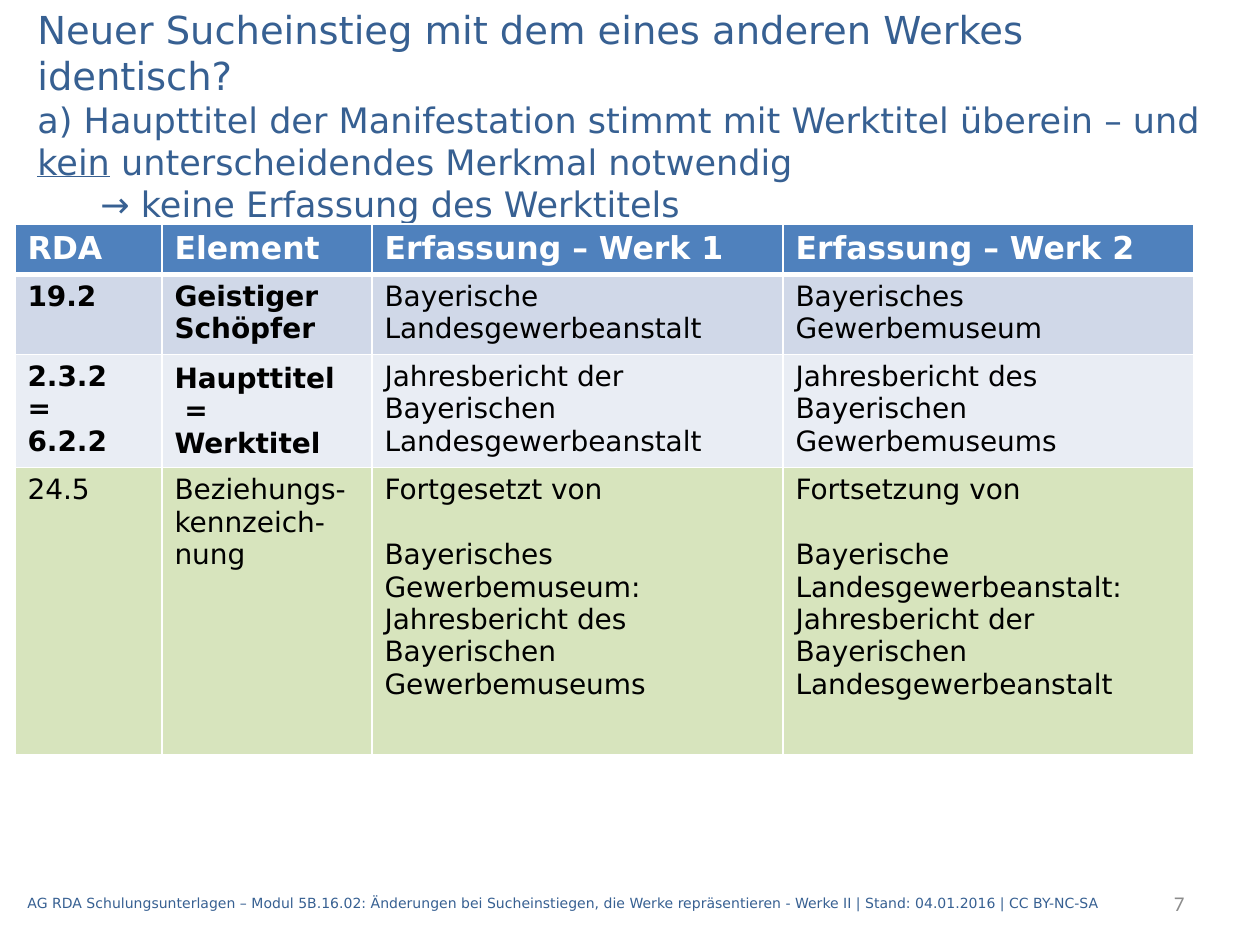
from lxml import etree
from pptx import Presentation
from pptx import util as u
from pptx.dml.color import RGBColor
from pptx.enum import text
from pptx.oxml.ns import qn

INK = {"blue": "376092", "gray": "8C8C8C", "black": "000000",
       "white": "FFFFFF", "head": "4F81BD", "mid": "D0D8E8",
       "pale": "E9EDF4", "green": "D7E4BD"}
MAIN = "DejaVu Sans"


def px(n):
    return u.Emu(round(n * 914400 / 126))


def write(par, words, size=16, ink="black", font=MAIN, bold=False, line=False):
    for i, part in enumerate(words.split("\n")):
        if i:
            par.add_line_break()
        if not part:
            continue
        run = par.add_run()
        run.text = part
        run.font.size = u.Pt(size)
        run.font.name = font
        run.font.bold = bold
        run.font.underline = line
        run.font.color.rgb = RGBColor.from_string(INK[ink])


class Page:
    def __init__(self, deck):
        self.slide = deck.slides.add_slide(deck.slide_layouts[6])

    def box(self, left, top, width, height, runs, align=text.PP_ALIGN.LEFT):
        shape = self.slide.shapes.add_textbox(*map(px, (left, top, width, height)))
        frame = shape.text_frame
        frame.word_wrap = True
        frame.vertical_anchor = text.MSO_ANCHOR.MIDDLE
        par = frame.paragraphs[0]
        par.alignment = align
        for words, form in runs:
            write(par, words, **form)

    def edge(self, cell, sides):
        props = cell._tc.get_or_add_tcPr()
        for at, (side, wide) in enumerate(sides.items()):
            line = etree.Element(qn(f"a:ln{side}"), w=str(u.Pt(wide)))
            fill = etree.SubElement(line, qn("a:solidFill"))
            etree.SubElement(fill, qn("a:srgbClr"), val=INK["white"])
            props.insert(at, line)

    def cell(self, cell, pars, fill, gap=0, **form):
        cell.fill.solid()
        cell.fill.fore_color.rgb = RGBColor.from_string(INK[fill])
        for i, words in enumerate(pars):
            frame = cell.text_frame
            par = frame.add_paragraph() if i else frame.paragraphs[0]
            if i and gap:
                par.space_before = u.Pt(gap)
            write(par, words, **form)

    def table(self, left, top, cols, rows, data, fills):
        grid = self.slide.shapes.add_table(
            len(rows), len(cols), *map(px, (left, top, sum(cols), sum(rows)))).table
        for col, wide in zip(grid.columns, cols):
            col.width = px(wide)
        for row, high in zip(grid.rows, rows):
            row.height = px(high)
        for r, line in enumerate(data):
            for c, pars in enumerate(line):
                cell = grid.cell(r, c)
                head = r == 0
                self.cell(cell, pars, fills[r],
                          gap=18.6 if r == 3 else 0,
                          size=18 if head else 16,
                          ink="white" if head else "black",
                          bold=head or (r < 3 and c < 2))
                self.edge(cell, {"L": 1, "R": 1, "T": 3 if r == 1 else 1,
                                 "B": 3 if head else 1})
        grid.cell(2, 1).vertical_anchor = text.MSO_ANCHOR.MIDDLE


def main():
    deck = Presentation()
    deck.slide_width, deck.slide_height = px(1260), px(945)
    page = Page(deck)
    sub = {"size": 20, "ink": "blue"}
    page.box(25, 16, 1191, 198, [
        ("Neuer Sucheinstieg mit dem eines anderen Werkes identisch?\n",
         {"size": 22, "ink": "blue"}),
        ("a) Haupttitel der Manifestation stimmt mit Werktitel überein – und ", sub),
        ("kein", {**sub, "line": True}),
        (" unterscheidendes Merkmal notwendig\n\t→ keine Erfassung des Werktitels", sub)])
    page.box(15, 878, 1150, 50, [
        ("AG RDA Schulungsunterlagen – Modul 5B.16.02: Änderungen bei Sucheinstiegen, "
         "die Werke repräsentieren - Werke II | Stand: 04.01.2016 | CC BY-NC-SA",
         {"size": 8, "ink": "blue"})])
    page.box(997, 878, 200, 50, [("7", {"size": 12, "ink": "gray", "font": "Calibri"})],
             text.PP_ALIGN.RIGHT)
    data = [
        [["RDA"], ["Element"], ["Erfassung – Werk 1"], ["Erfassung – Werk 2"]],
        [["19.2"], ["Geistiger Schöpfer"], ["Bayerische Landesgewerbeanstalt"],
         ["Bayerisches Gewerbemuseum"]],
        [["2.3.2", "=", "6.2.2"], ["Haupttitel", " =", "Werktitel"],
         ["Jahresbericht der Bayerischen Landesgewerbeanstalt"],
         ["Jahresbericht des Bayerischen Gewerbemuseums"]],
        [["24.5"], ["Beziehungs-kennzeich-nung"],
         ["Fortgesetzt von",
          "Bayerisches Gewerbemuseum: Jahresbericht des Bayerischen Gewerbemuseums"],
         ["Fortsetzung von",
          "Bayerische Landesgewerbeanstalt: Jahresbericht der Bayerischen "
          "Landesgewerbeanstalt"]]]
    page.table(15, 224, [147, 210, 411, 411], [49, 79, 110, 287], data,
               ["head", "mid", "pale", "green"])
    deck.save("out.pptx")


if __name__ == "__main__":
    main()
